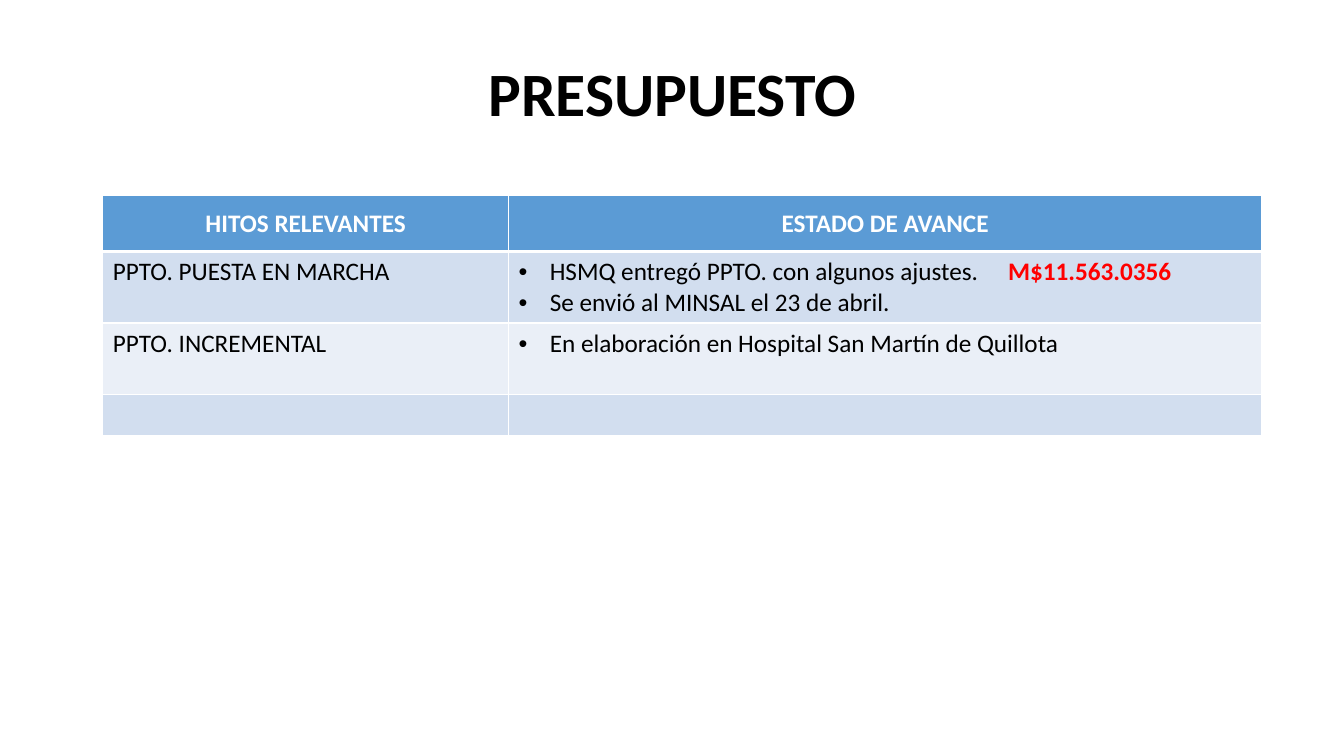
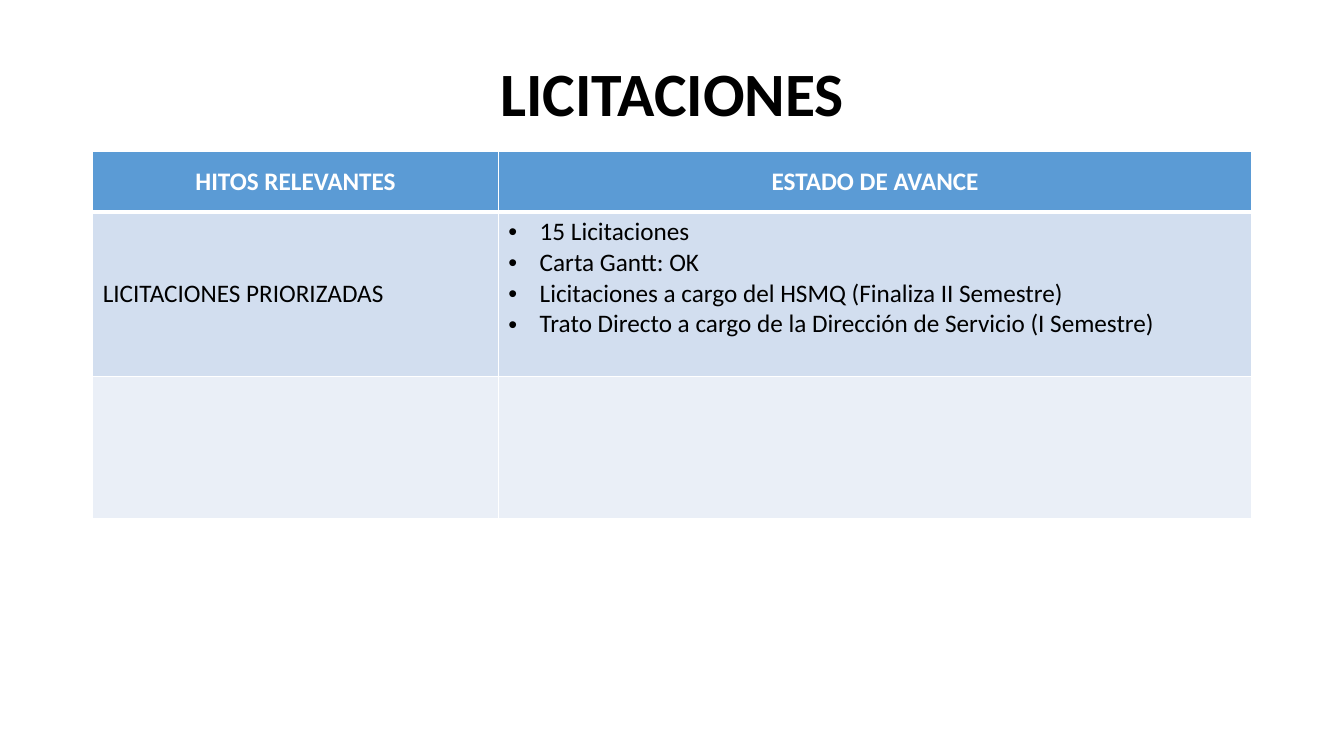
import pptx
import pptx.util
import pptx.dml.color
import pptx.enum.text
import pptx.oxml.ns
import lxml.etree
from dataclasses import dataclass


@dataclass(frozen=True)
class Theme:
    font: str = "Calibri"
    ink: str = "000000"
    paper: str = "FFFFFF"
    head: str = "5B9BD5"
    bands: tuple = ("D2DEEF", "EAEFF7")
    alert: str = "FF0000"
    title: int = 44
    body: int = 18
    rule: int = 1
    thick: int = 3
    gap: int = 17


THEME = Theme()
ALIGN = pptx.enum.text.PP_ALIGN
ANCHOR = pptx.enum.text.MSO_ANCHOR

# Grid: 100 columns by 100 rows
WIDE, HIGH = pptx.util.Inches(13.33), pptx.util.Inches(7.5)
COL, ROW = WIDE / 100, HIGH / 100
TITLE = (6.9, 5.33, 86.25, 14.8)
SPLIT = (0.35, 0.65)
HEADS = ("HITOS RELEVANTES", "ESTADO DE AVANCE")
INDENT = pptx.util.Inches(0.31)

# Slide content: a row is (height, label, label anchor, bullets)
SLIDES = (
    dict(title="PRESUPUESTO", box=(7.65, 25.87, 86.25), head=7.4, rows=(
        (9.47, "PPTO. PUESTA EN MARCHA", ANCHOR.TOP,
         (("HSMQ entregó PPTO. con algunos ajustes.", "M$11.563.0356"),
          ("Se envió al MINSAL el 23 de abril.",))),
        (9.47, "PPTO. INCREMENTAL", ANCHOR.TOP,
         (("En elaboración en Hospital San Martín de Quillota",),)),
        (5.47, "", ANCHOR.TOP, ()))),
    dict(title="LICITACIONES", box=(6.9, 20, 86.25), head=8, rows=(
        (21.8, "LICITACIONES PRIORIZADAS", ANCHOR.MIDDLE,
         (("15 Licitaciones",),
          ("Carta Gantt: OK",),
          ("Licitaciones a cargo del HSMQ (Finaliza II Semestre)",),
          ("Trato Directo a cargo de la Dirección de Servicio (I Semestre)",))),
        (18.8, "", ANCHOR.TOP, ()))),
)


def paint(fill, tint):
    fill.solid()
    fill.fore_color.rgb = pptx.dml.color.RGBColor.from_string(tint)


def write(para, text, size=THEME.body, tint=THEME.ink, bold=False):
    run = para.add_run()
    run.text = text
    run.font.name, run.font.size = THEME.font, pptx.util.Pt(size)
    run.font.bold = bold
    paint(run.font.fill, tint)
    return run


def bullet(para):
    props = para._p.get_or_add_pPr()
    props.set("marL", str(INDENT))
    props.set("indent", str(-INDENT))
    for tag, key, val in (("a:buFont", "typeface", "Arial"),
                          ("a:buChar", "char", "•")):
        lxml.etree.SubElement(props, pptx.oxml.ns.qn(tag)).set(key, val)


def border(cell, top, base):
    props = cell._tc.get_or_add_tcPr()
    sides = (("L", THEME.rule), ("R", THEME.rule), ("T", top), ("B", base))
    for spot, (side, width) in enumerate(sides):
        line = lxml.etree.Element(pptx.oxml.ns.qn("a:ln" + side))
        line.set("w", str(pptx.util.Pt(width)))
        fill = lxml.etree.SubElement(line, pptx.oxml.ns.qn("a:solidFill"))
        tint = lxml.etree.SubElement(fill, pptx.oxml.ns.qn("a:srgbClr"))
        tint.set("val", THEME.paper)
        props.insert(spot, line)


def add_title(slide, text, box):
    left, top, width, height = box
    shape = slide.shapes.add_textbox(int(left * COL), int(top * ROW),
                                     int(width * COL), int(height * ROW))
    frame = shape.text_frame
    frame.word_wrap = True
    frame.vertical_anchor = ANCHOR.MIDDLE
    para = frame.paragraphs[0]
    para.alignment, para.line_spacing = ALIGN.CENTER, 0.9
    write(para, text, THEME.title, bold=True)


def fill_head(cells):
    for cell, text in zip(cells, HEADS):
        cell.vertical_anchor = ANCHOR.MIDDLE
        para = cell.text_frame.paragraphs[0]
        para.alignment = ALIGN.CENTER
        write(para, text, tint=THEME.paper, bold=True)


def fill_row(cells, label, anchor, items):
    name, state = cells
    name.vertical_anchor = anchor
    if label:
        write(name.text_frame.paragraphs[0], label)
    frame = state.text_frame
    for spot, (text, *sums) in enumerate(items):
        para = frame.add_paragraph() if spot else frame.paragraphs[0]
        bullet(para)
        write(para, text)
        for total in sums:
            # One widely tracked space sets the sum apart
            space = write(para, " ")
            space.font._element.set("spc", str(THEME.gap * 100))
            write(para, total, tint=THEME.alert, bold=True)


def add_grid(slide, box, head, rows):
    left, top, width = box
    tall = [head] + [row[0] for row in rows]
    table = slide.shapes.add_table(
        len(tall), len(SPLIT), int(left * COL), int(top * ROW),
        int(width * COL), int(sum(tall) * ROW)).table
    table.first_row = table.horz_banding = False
    for col, share in zip(table.columns, SPLIT):
        col.width = int(width * COL * share)
    for spot, height in enumerate(tall):
        line = table.rows[spot]
        line.height = int(height * ROW)
        cells = list(line.cells)
        tint = THEME.bands[(spot - 1) % 2] if spot else THEME.head
        for cell in cells:
            paint(cell.fill, tint)
            border(cell, THEME.thick if spot == 1 else THEME.rule,
                   THEME.rule if spot else THEME.thick)
        if spot:
            fill_row(cells, *rows[spot - 1][1:])
        else:
            fill_head(cells)


def main():
    deck = pptx.Presentation()
    deck.slide_width, deck.slide_height = WIDE, HIGH
    for page in SLIDES:
        slide = deck.slides.add_slide(deck.slide_layouts[6])
        add_title(slide, page["title"], TITLE)
        add_grid(slide, page["box"], page["head"], page["rows"])
    deck.save("out.pptx")


if __name__ == "__main__":
    main()
